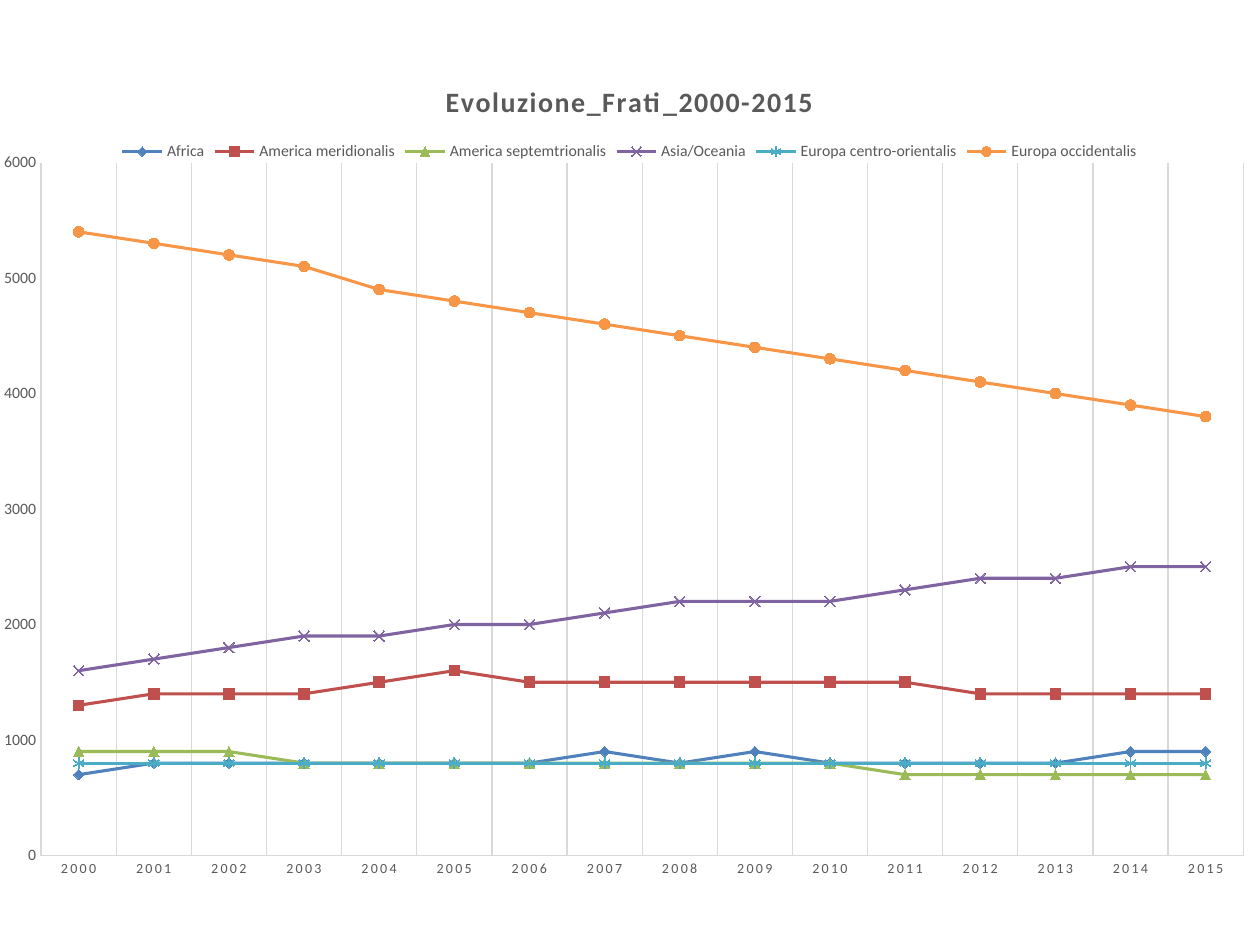
from dataclasses import dataclass

from pptx import Presentation
from pptx.chart.data import CategoryChartData
from pptx.dml.color import RGBColor
from pptx.enum.chart import XL_CHART_TYPE as ChartType
from pptx.enum.chart import XL_LEGEND_POSITION as LegendPosition
from pptx.enum.chart import XL_MARKER_STYLE as Marker
from pptx.enum.chart import XL_TICK_MARK as TickMark
from pptx.oxml import parse_xml
from pptx.oxml.ns import nsdecls
from pptx.util import Emu, Pt

PX_PER_INCH = 126
BLACK = RGBColor(0x00, 0x00, 0x00)
GRAY = RGBColor(0x59, 0x59, 0x59)
LIGHT_GRAY = RGBColor(0xD9, 0xD9, 0xD9)
BLUE = RGBColor(0x4F, 0x81, 0xBD)
RED = RGBColor(0xC0, 0x50, 0x4D)
GREEN = RGBColor(0x9B, 0xBB, 0x59)
PURPLE = RGBColor(0x80, 0x64, 0xA2)
TEAL = RGBColor(0x4B, 0xAC, 0xC6)
ORANGE = RGBColor(0xF7, 0x96, 0x46)
FONT_NAME = "Calibri"
YEARS = [str(year) for year in range(2000, 2016)]


@dataclass(frozen=True)
class Region:
    name: str
    color: RGBColor
    marker: Marker
    filled: bool
    hundreds: tuple[int, ...]


REGIONS = [
    Region("Africa", BLUE, Marker.DIAMOND, True,
           (7, 8, 8, 8, 8, 8, 8, 9, 8, 9, 8, 8, 8, 8, 9, 9)),
    Region("America meridionalis", RED, Marker.SQUARE, True,
           (13, 14, 14, 14, 15, 16, 15, 15, 15, 15, 15, 15, 14, 14, 14, 14)),
    Region("America septemtrionalis", GREEN, Marker.TRIANGLE, True,
           (9, 9, 9, 8, 8, 8, 8, 8, 8, 8, 8, 7, 7, 7, 7, 7)),
    Region("Asia/Oceania", PURPLE, Marker.X, False,
           (16, 17, 18, 19, 19, 20, 20, 21, 22, 22, 22, 23, 24, 24, 25, 25)),
    Region("Europa centro-orientalis", TEAL, Marker.STAR, False, (8,) * 16),
    Region("Europa occidentalis", ORANGE, Marker.CIRCLE, True,
           (54, 53, 52, 51, 49, 48, 47, 46, 45, 44, 43, 42, 41, 40, 39, 38)),
]


def px(length: int) -> Emu:
    return Emu(round(length * 914400 / PX_PER_INCH))


def set_font(font, size: int, color: RGBColor = GRAY, bold: bool = False) -> None:
    font.name = FONT_NAME
    font.size = Pt(size)
    font.bold = bold
    font.color.rgb = color


def set_line(line, color: RGBColor, width: float) -> None:
    line.color.rgb = color
    line.width = Pt(width)


def set_letter_spacing(element, hundredths: int) -> None:
    for properties in element.xpath(".//a:defRPr"):
        properties.set("spc", str(hundredths))


def format_axis(axis, size: int) -> None:
    axis.major_tick_mark = TickMark.NONE
    axis.minor_tick_mark = TickMark.NONE
    set_font(axis.tick_labels.font, size)
    set_line(axis.format.line, LIGHT_GRAY, 0.75)


def format_series(series, region: Region) -> None:
    series.smooth = False
    set_line(series.format.line, region.color, 1.75)
    marker = series.marker
    marker.style = region.marker
    marker.size = 6
    set_line(marker.format.line, region.color, 0.75)
    if region.filled:
        marker.format.fill.solid()
        marker.format.fill.fore_color.rgb = region.color
    else:
        marker.format.fill.background()


def place_plot(chart, x: float, y: float, width: float, height: float) -> None:
    plot_area = chart._chartSpace.chart.plotArea
    for layout in plot_area.xpath("./c:layout"):
        plot_area.remove(layout)
    sizes = {"x": x, "y": y, "w": width, "h": height}
    values = "".join(f'<c:{key} val="{size}"/>' for key, size in sizes.items())
    plot_area.insert(0, parse_xml(
        f'<c:layout {nsdecls("c")}><c:manualLayout><c:layoutTarget val="inner"/>'
        f'<c:xMode val="edge"/><c:yMode val="edge"/>{values}'
        "</c:manualLayout></c:layout>"))


def add_friars_chart(slide) -> None:
    data = CategoryChartData()
    data.categories = YEARS
    for region in REGIONS:
        data.add_series(region.name, [100 * value for value in region.hundreds])
    chart = slide.shapes.add_chart(
        ChartType.LINE_MARKERS, px(-10), px(54), px(1279), px(835), data).chart
    set_font(chart.font, 10, BLACK)

    chart.has_title = True
    chart.chart_title.include_in_layout = False
    paragraph = chart.chart_title.text_frame.paragraphs[0]
    paragraph.text = "Evoluzione_Frati_2000-2015"
    set_font(paragraph.font, 16, bold=True)
    set_letter_spacing(chart.chart_title._element, 100)

    chart.has_legend = True
    chart.legend.position = LegendPosition.TOP
    chart.legend.include_in_layout = False
    set_font(chart.legend.font, 9)

    category_axis, value_axis = chart.category_axis, chart.value_axis
    format_axis(category_axis, 8)
    set_letter_spacing(category_axis._element, 120)
    category_axis.has_major_gridlines = True
    set_line(category_axis.major_gridlines.format.line, LIGHT_GRAY, 0.75)
    format_axis(value_axis, 9)
    value_axis.has_major_gridlines = False
    value_axis.minimum_scale = 0
    value_axis.maximum_scale = 6000
    value_axis.major_unit = 1000

    chart.plots[0].vary_by_categories = False
    for series, region in zip(chart.plots[0].series, REGIONS):
        format_series(series, region)
    place_plot(chart, 0.04, 0.13, 0.94, 0.83)


def main() -> None:
    presentation = Presentation()
    presentation.slide_width = px(1260)
    presentation.slide_height = px(945)
    slide = presentation.slides.add_slide(presentation.slide_layouts[6])
    add_friars_chart(slide)
    presentation.save("out.pptx")


if __name__ == "__main__":
    main()
